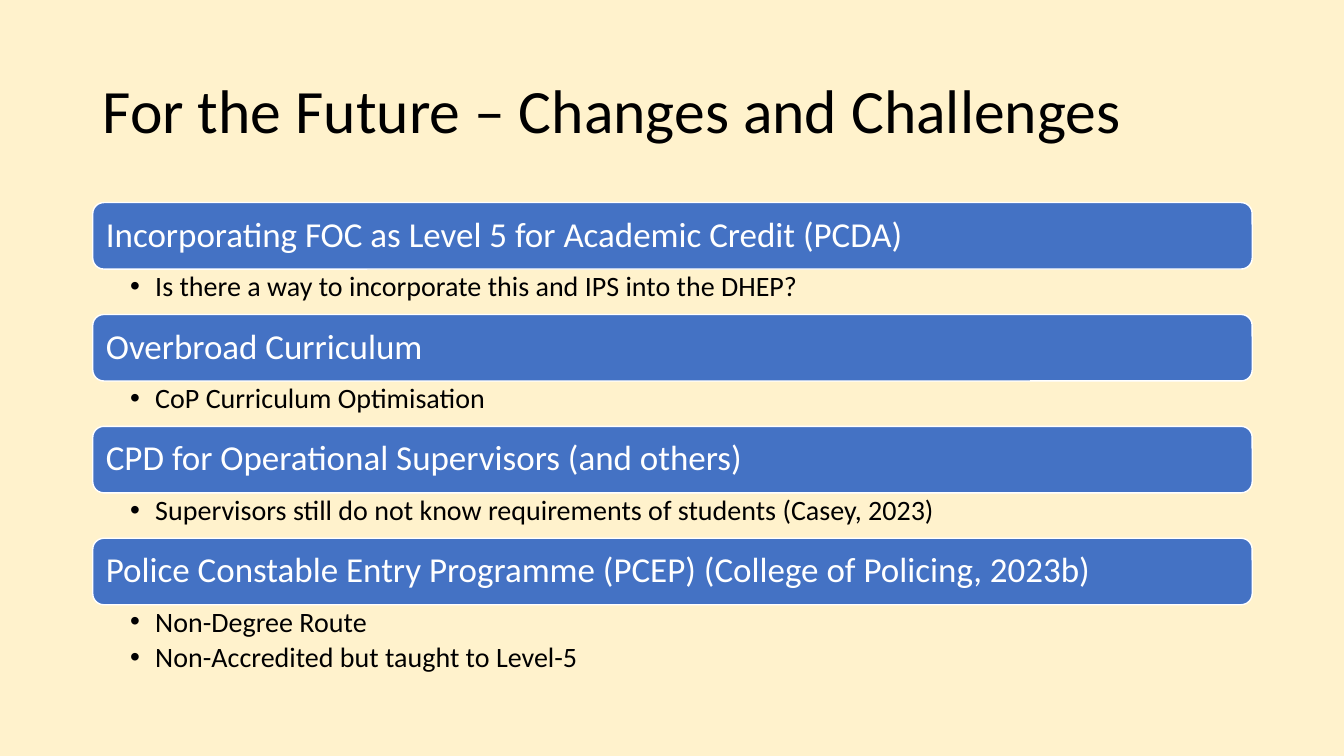
from lxml import etree
from pptx import Presentation
from pptx.dml.color import RGBColor
from pptx.enum import shapes, text
from pptx.oxml.ns import qn
from pptx.util import Inches, Pt

CREAM = RGBColor(0xFF, 0xF2, 0xCC)
BLUE = RGBColor(0x44, 0x72, 0xC4)
WHITE = RGBColor(0xFF, 0xFF, 0xFF)
BLACK = RGBColor(0, 0, 0)

LEFT, WIDTH = 0.92, 11.5
TOP, PITCH = 2.01, 1.11
BAR_HEIGHT = 0.66
BULLET_HEIGHT, EXTRA_BULLET = 0.45, 0.3

TOPICS = [
    ("Incorporating FOC as Level 5 for Academic Credit (PCDA)",
     ["Is there a way to incorporate this and IPS into the DHEP?"]),
    ("Overbroad Curriculum", ["CoP Curriculum Optimisation"]),
    ("CPD for Operational Supervisors (and others)",
     ["Supervisors still do not know requirements of students (Casey, 2023)"]),
    ("Police Constable Entry Programme (PCEP) (College of Policing, 2023b)",
     ["Non-Degree Route", "Non-Accredited but taught to Level-5"]),
]


def set_frame(sp, anchor, left, top, right, bottom):
    """Set wrapping, anchor and insets (inches) and return the text frame."""
    tf = sp.text_frame
    formats = {
        "word_wrap": True,
        "vertical_anchor": anchor,
        "margin_left": Inches(left),
        "margin_top": Inches(top),
        "margin_right": Inches(right),
        "margin_bottom": Inches(bottom),
    }
    for name, value in formats.items():
        setattr(tf, name, value)
    return tf


def write(p, content, size, color, after=0):
    formats = {
        "alignment": text.PP_ALIGN.LEFT,
        "line_spacing": 0.9,
        "space_after": Pt(after),
    }
    for name, value in formats.items():
        setattr(p, name, value)
    r = p.add_run()
    r.text = content
    r.font.name = "Calibri"
    r.font.size = Pt(size)
    r.font.color.rgb = color


def add_bullet(p):
    pPr = p._p.get_or_add_pPr()
    pPr.set("marL", str(Inches(0.25)))
    pPr.set("indent", str(Inches(-0.25)))
    etree.SubElement(pPr, qn("a:buFont")).set("typeface", "Arial")
    etree.SubElement(pPr, qn("a:buChar")).set("char", "•")


def add_title(s, content):
    sp = s.shapes.add_textbox(Inches(LEFT), Inches(0.4), Inches(WIDTH), Inches(1.45))
    tf = set_frame(sp, text.MSO_ANCHOR.MIDDLE, 0.1, 0.05, 0.1, 0.05)
    write(tf.paragraphs[0], content, 44, BLACK)


def add_bar(s, top, content):
    sp = s.shapes.add_shape(shapes.MSO_SHAPE.ROUNDED_RECTANGLE, Inches(LEFT),
                            Inches(top), Inches(WIDTH), Inches(BAR_HEIGHT))
    sp.shadow.inherit = False
    sp.fill.solid()
    sp.fill.fore_color.rgb = BLUE
    sp.line.color.rgb = WHITE
    sp.line.width = Pt(1)
    tf = set_frame(sp, text.MSO_ANCHOR.MIDDLE, 0.1, 0.1, 0.1, 0.1)
    write(tf.paragraphs[0], content, 25, WHITE)


def add_bullets(s, top, items):
    height = BULLET_HEIGHT + EXTRA_BULLET * (len(items) - 1)
    sp = s.shapes.add_textbox(Inches(LEFT), Inches(top), Inches(WIDTH), Inches(height))
    tf = set_frame(sp, text.MSO_ANCHOR.TOP, 0.37, 0.03, 0.19, 0.03)
    for i, item in enumerate(items):
        p = tf.add_paragraph() if i else tf.paragraphs[0]
        write(p, item, 20, BLACK, after=4)
        add_bullet(p)


def main():
    prs = Presentation()
    prs.slide_width, prs.slide_height = Inches(13.33), Inches(7.5)
    s = prs.slides.add_slide(prs.slide_layouts[6])
    s.background.fill.solid()
    s.background.fill.fore_color.rgb = CREAM
    add_title(s, "For the Future – Changes and Challenges")
    for i, (topic, items) in enumerate(TOPICS):
        top = TOP + i * PITCH
        add_bar(s, top, topic)
        add_bullets(s, top + BAR_HEIGHT, items)
    prs.save("out.pptx")


if __name__ == "__main__":
    main()
